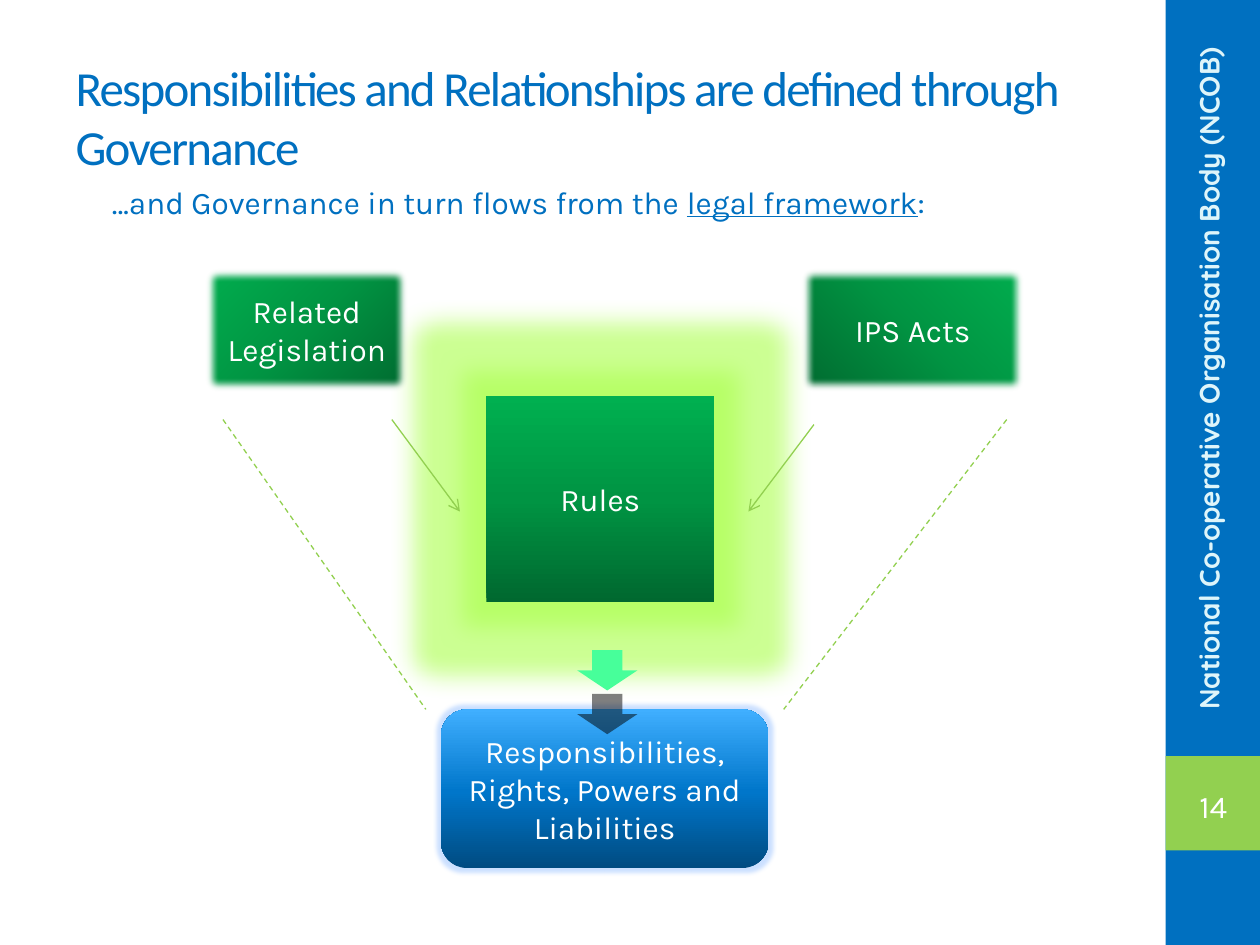
from pptx import Presentation
from pptx.dml.color import RGBColor
from pptx.enum.dml import MSO_LINE
from pptx.enum.shapes import MSO_CONNECTOR, MSO_SHAPE
from pptx.enum.text import MSO_ANCHOR, MSO_AUTO_SIZE, PP_ALIGN
from pptx.oxml import parse_xml
from pptx.oxml.ns import nsdecls, qn
from pptx.util import Inches, Pt

RECT, ROUNDED = MSO_SHAPE.RECTANGLE, MSO_SHAPE.ROUNDED_RECTANGLE
BRACKETS, DOWN_ARROW = MSO_SHAPE.DOUBLE_BRACKET, MSO_SHAPE.DOWN_ARROW
STRAIGHT, DASH = MSO_CONNECTOR.STRAIGHT, MSO_LINE.DASH
LEFT, CENTER, RIGHT = PP_ALIGN.LEFT, PP_ALIGN.CENTER, PP_ALIGN.RIGHT
TOP, MIDDLE = MSO_ANCHOR.TOP, MSO_ANCHOR.MIDDLE

COLORS = {
    "blue": "0070C0", "lime": "92D050", "mint": "47FF9A",
    "white": "FFFFFF", "pale": "DEF5FA", "black": "000000",
    "lime_glow": "AAFF4B", "blue_glow": "7FB2FF",
}
GREENS = [(0, "00682F"), (50, "009443"), (100, "00B050")]
BLUES = [(0, "004B81"), (48, "0076CA"), (100, "40AFFF")]
UPWARD = '<a:lin ang="16200000" scaled="0"/>'
COLUMNS, ROWS = 100, 75


def color(name):
    return RGBColor.from_string(COLORS[name])


def corner(*far_sides):
    """Radial gradient that starts in the corner opposite the two far sides."""
    rect = " ".join(f'{side}="100000"' for side in far_sides)
    return f'<a:path path="circle"><a:fillToRect {rect}/></a:path>'


def effect(tag, attrs, name=None, alpha=100):
    """One effect element, with a colour when it needs one."""
    inner = ""
    if name:
        inner = (f'<a:srgbClr val="{COLORS[name]}">'
                 f'<a:alpha val="{alpha * 1000}"/></a:srgbClr>')
    return parse_xml(f'<a:{tag} {nsdecls("a")} {attrs}>{inner}</a:{tag}>')


def glow(name, points, alpha):
    return effect("glow", f'rad="{Pt(points)}"', name, alpha)


def soft_edge(points):
    return effect("softEdge", f'rad="{Pt(points)}"')


def write(tf, *parts, size=18, font="Karla", fill="white", bold=False,
          align=CENTER, anchor=MIDDLE, spacing=None):
    """Fill a frame with one paragraph; a (text, True) part is underlined."""
    tf.word_wrap = True
    tf.auto_size = MSO_AUTO_SIZE.NONE
    tf.vertical_anchor = anchor
    p = tf.paragraphs[0]
    p.alignment = align
    for part in parts:
        text, underline = part if isinstance(part, tuple) else (part, False)
        r = p.add_run()
        r.text = text
        r.font.size, r.font.name = Pt(size), font
        r.font.bold, r.font.underline = bold, underline
        r.font.color.rgb = color(fill)
        if spacing is not None:
            r._r.get_or_add_rPr().set("spc", str(spacing * 100))


class Deck:
    def __init__(self):
        self.prs = Presentation()
        self.prs.slide_width, self.prs.slide_height = Inches(10), Inches(7.5)
        self.slide = self.prs.slides.add_slide(self.prs.slide_layouts[5])

    def x(self, column):
        return round(self.prs.slide_width * column / COLUMNS)

    def y(self, row):
        return round(self.prs.slide_height * row / ROWS)

    def box(self, left, top, width, height):
        return self.x(left), self.y(top), self.x(width), self.y(height)

    def title(self, at, text, **style):
        s = self.slide.shapes.title
        s.left, s.top, s.width, s.height = self.box(*at)
        write(s.text_frame, text, **style)

    def text(self, at, *parts, rotation=0, **style):
        s = self.slide.shapes.add_textbox(*self.box(*at))
        s.rotation = rotation
        write(s.text_frame, *parts, **style)

    def shape(self, kind, at, fill=None, text=None, effects=()):
        s = self.slide.shapes.add_shape(kind, *self.box(*at))
        s.shadow.inherit = False
        s.line.fill.background()
        if fill:
            s.fill.solid()
            s.fill.fore_color.rgb = color(fill)
        else:
            s.fill.background()
        if text:
            write(s.text_frame, text)
        effect_list = s._element.spPr.find(qn("a:effectLst"))
        for item in effects:
            effect_list.append(item)
        return s

    def gradient(self, kind, at, stops, direction, text, effects):
        s = self.shape(kind, at, text=text, effects=effects)
        marks = "".join(f'<a:gs pos="{pos * 1000}"><a:srgbClr val="{rgb}"/></a:gs>'
                        for pos, rgb in stops)
        spPr = s._element.spPr
        spPr.replace(spPr.find(qn("a:noFill")), parse_xml(
            f'<a:gradFill {nsdecls("a")} rotWithShape="1">'
            f'<a:gsLst>{marks}</a:gsLst>{direction}</a:gradFill>'))

    def line(self, start, end, dashed=False):
        s = self.slide.shapes.add_connector(
            STRAIGHT, self.x(start[0]), self.y(start[1]), self.x(end[0]), self.y(end[1]))
        s.line.color.rgb = color("lime")
        s.line.width = Pt(0.75)
        spPr = s._element.spPr
        if dashed:
            s.line.dash_style = DASH
        else:
            spPr.find(qn("a:ln")).append(
                parse_xml(f'<a:tailEnd {nsdecls("a")} type="arrow"/>'))
        spPr.append(parse_xml(f'<a:effectLst {nsdecls("a")}/>'))


def main():
    deck = Deck()

    # Sidebar with society name and slide number
    deck.shape(RECT, (92.5, 0, 7.5, 75), "blue")
    deck.shape(RECT, (92.5, 60, 7.5, 7.5), "lime")
    deck.text((67.7, 29, 56.4, 4), "National Co-operative Organisation Body (NCOB)",
              rotation=270, size=16, font="Quicksand", fill="pale", bold=True, align=RIGHT)
    number = deck.shape(BRACKETS, (93.3, 61.8, 6, 4.3), text="14")
    tf = number.text_frame
    tf.margin_left = tf.margin_right = tf.margin_top = tf.margin_bottom = 0

    # Heading
    deck.title((5, 3, 83.3, 12.5),
               "Responsibilities and Relationships are defined through Governance",
               size=28, font="Calibri", fill="blue", align=LEFT, spacing=-1)
    deck.text((7.9, 14, 84.3, 58), "…and Governance in turn flows from the ",
              ("legal framework", True), ":", fill="blue", align=LEFT, anchor=TOP)

    # Legal framework, rules and outcome
    deck.gradient(ROUNDED, (35, 56.3, 26, 12.6), BLUES, UPWARD,
                  "Responsibilities, Rights, Powers and Liabilities",
                  [glow("blue_glow", 5, 40)])
    deck.gradient(RECT, (38.6, 31.4, 18.1, 16.4), GREENS, UPWARD, "Rules",
                  [glow("lime_glow", 28, 60)])
    for left, width, direction, text in (
            (63.4, 18.1, corner("t", "r"), "IPS Acts"),
            (16.1, 16.5, corner("l", "t"), "Related Legislation")):
        deck.gradient(RECT, (left, 21.1, width, 10.2), GREENS, direction,
                      text, [soft_edge(5)])

    # Flow lines
    deck.line((31.1, 33.3), (36.5, 40.6))
    deck.line((64.6, 33.7), (59.4, 40.6))
    deck.line((17.7, 33.3), (33.8, 56.3), dashed=True)
    deck.line((79.9, 33.3), (62.2, 56.3), dashed=True)

    # Arrow from rules to outcome
    drop = effect("outerShdw", f'dist="{Pt(25)}" dir="5400000" rotWithShape="0"', "black", 50)
    deck.shape(DOWN_ARROW, (45.8, 51.6, 4.8, 3.2), "mint", effects=[drop])

    deck.prs.save("out.pptx")


if __name__ == "__main__":
    main()
